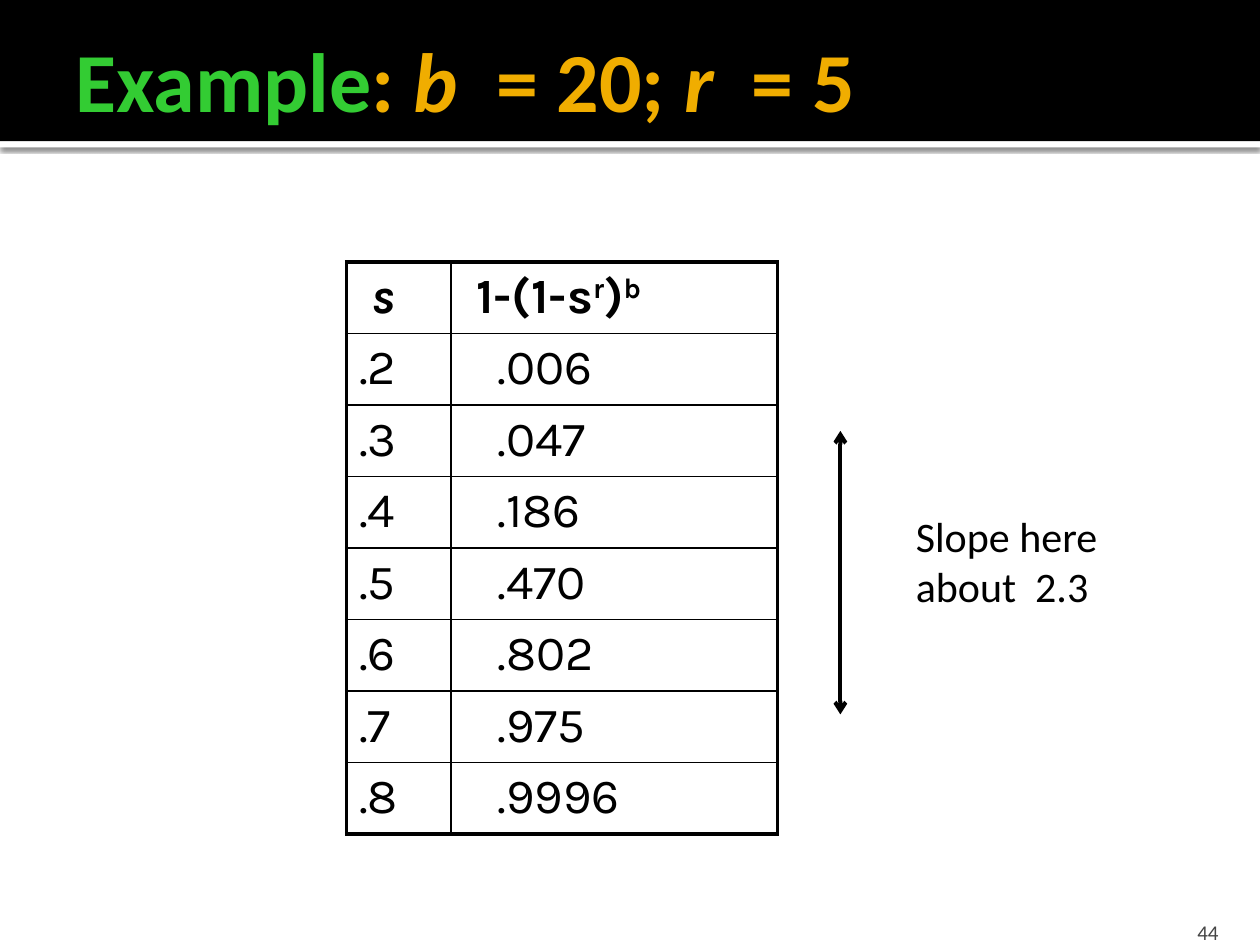
from lxml import etree
from pptx import Presentation
from pptx import util as u
from pptx.dml.color import RGBColor
from pptx.enum import shapes, text
from pptx.oxml import parse_xml
from pptx.oxml.ns import nsdecls, qn

BLACK = RGBColor(0x00, 0x00, 0x00)
WHITE = RGBColor(0xFF, 0xFF, 0xFF)
GREEN = RGBColor(0x33, 0xCC, 0x33)
GOLD = RGBColor(0xF0, 0xAD, 0x00)
GREY = RGBColor(0x45, 0x45, 0x45)

THIN, THICK = u.Pt(1), u.Pt(2.25)
ROWS = [(".2", ".006"), (".3", ".047"), (".4", ".186"), (".5", ".470"),
        (".6", ".802"), (".7", ".975"), (".8", ".9996")]


def inches(*lengths):
    return [u.Inches(length) for length in lengths]


def add_span(para, words, color, baseline=0, **font):
    span = para.add_run()
    span.text = words
    for name, value in font.items():
        setattr(span.font, name, value)
    span.font.color.rgb = color
    if baseline:
        span.font._element.set("baseline", str(baseline * 1000))


def add_bar(page, box, color):
    bar = page.shapes.add_shape(shapes.MSO_SHAPE.RECTANGLE, *inches(*box))
    bar.shadow.inherit = False
    bar.fill.solid()
    bar.fill.fore_color.rgb = color
    bar.line.fill.background()
    return bar


def add_header(page, box):
    left, top, width, height = box
    # White strip with a soft shadow below the black band
    strip = add_bar(page, (left, top + height, width, 0.05), WHITE)
    effects = strip._element.spPr.find(qn("a:effectLst"))
    effects.append(parse_xml(
        f'<a:outerShdw {nsdecls("a")} blurRad="{u.Pt(2.5)}" dist="{u.Pt(0.8)}" dir="5400000">'
        '<a:srgbClr val="000000"><a:alpha val="60000"/></a:srgbClr></a:outerShdw>'))
    add_bar(page, box, BLACK)

    # Title, in front of the band
    title = page.shapes.title
    page.shapes._spTree.append(title._element)
    title.left, title.top, title.width, title.height = inches(left + 0.5, top + 0.17, 9.5, 0.92)
    frame = title.text_frame
    settings = {"margin_left": u.Inches(0.1), "margin_right": u.Inches(0.05),
                "margin_top": u.Inches(0.05), "margin_bottom": u.Inches(0.05),
                "vertical_anchor": text.MSO_ANCHOR.MIDDLE,
                "auto_size": text.MSO_AUTO_SIZE.NONE, "word_wrap": True}
    for name, value in settings.items():
        setattr(frame, name, value)
    para = frame.paragraphs[0]
    para.alignment = text.PP_ALIGN.LEFT
    for words, color, italic in [("Example", GREEN, False), (": ", GOLD, False),
                                 ("b", GOLD, True), ("  = 20; ", GOLD, False),
                                 ("r", GOLD, True), ("  = 5", GOLD, False)]:
        add_span(para, words, color, name="Calibri", size=u.Pt(48), bold=True, italic=italic)


def set_borders(cell, widths):
    for side, width in widths.items():
        cell._tc.get_or_add_tcPr().append(parse_xml(
            f'<a:ln{side} {nsdecls("a")} w="{width}"><a:solidFill>'
            f'<a:srgbClr val="{BLACK}"/></a:solidFill></a:ln{side}>'))


def add_value_table(page, box):
    # Each cell is a list of (words, baseline)
    header = [[("s", 0)], [("1-(1-s", 0), ("r", 30), (")", 0), ("b", 30)]]
    grid = [header] + [[[(words, 0)] for words in row] for row in ROWS]
    last = len(grid) - 1
    table = page.shapes.add_table(len(grid), 2, *inches(*box)).table
    table.first_row = table.horz_banding = False
    table.columns[0].width = u.Inches(0.83)
    table.columns[1].width = u.Inches(box[2] - 0.83)

    for r, row in enumerate(grid):
        table.rows[r].height = u.Inches(box[3] / len(grid))
        for c, spans in enumerate(row):
            cell = table.cell(r, c)
            set_borders(cell, {"L": THIN if c else THICK, "R": THICK if c else THIN,
                               "T": THIN if r else THICK, "B": THICK if r == last else THIN})
            cell.fill.background()
            is_header = r == 0
            indent = 0.1 if is_header else 0.27 * c
            cell.margin_left = u.Inches(0.1 + indent)
            para = cell.text_frame.paragraphs[0]
            before = etree.SubElement(para._p.get_or_add_pPr(), qn("a:spcBef"))
            etree.SubElement(before, qn("a:spcPct"), val="20000")
            for words, baseline in spans:
                add_span(para, words, BLACK, baseline, name="Karla", size=u.Pt(28),
                         bold=is_header, italic=is_header and c == 0)


def add_arrow(page, start, end):
    arrow = page.shapes.add_connector(shapes.MSO_CONNECTOR.STRAIGHT,
                                      *inches(*start), *inches(*end))
    arrow.line.color.rgb = BLACK
    arrow.line.width = THICK
    etree.SubElement(arrow.line._get_or_add_ln(), qn("a:tailEnd"), type="arrow")
    etree.SubElement(arrow._element.spPr, qn("a:effectLst"))


def add_text(page, box, lines, color, size, align, settings):
    frame = page.shapes.add_textbox(*inches(*box)).text_frame
    for name, value in settings.items():
        setattr(frame, name, value)
    for i, words in enumerate(lines):
        para = frame.add_paragraph() if i else frame.paragraphs[0]
        para.alignment = align
        add_span(para, words, color, name="Calibri", size=u.Pt(size))


def add_slope_note(page, box):
    left, top, width, height = box
    # Two arrows pointing away from a shared middle
    middle = (left, top + 1.16)
    for end in (top, top + height):
        add_arrow(page, middle, (left, end))
    add_text(page, (left + 0.5, top + 0.58, width - 0.5, 0.91), ["Slope here", "about  2.3"],
             BLACK, 24, text.PP_ALIGN.LEFT,
             {"word_wrap": False, "auto_size": text.MSO_AUTO_SIZE.SHAPE_TO_FIT_TEXT})


def add_page_number(page, box):
    add_text(page, box, ["44"], GREY, 12, text.PP_ALIGN.RIGHT,
             {"word_wrap": True, "margin_bottom": 0, "vertical_anchor": text.MSO_ANCHOR.BOTTOM})


def main():
    deck = Presentation()
    deck.slide_width, deck.slide_height = inches(10, 7.5)
    page = deck.slides.add_slide(deck.slide_layouts.get_by_name("Title Only"))
    add_header(page, (0, 0, 10, 1.12))
    add_page_number(page, (8.97, 7.2, 0.8, 0.3))
    add_value_table(page, (2.75, 2.08, 3.42, 4.45))
    add_slope_note(page, (6.67, 3.42, 2.19, 2.25))
    deck.save("out.pptx")


if __name__ == "__main__":
    main()
